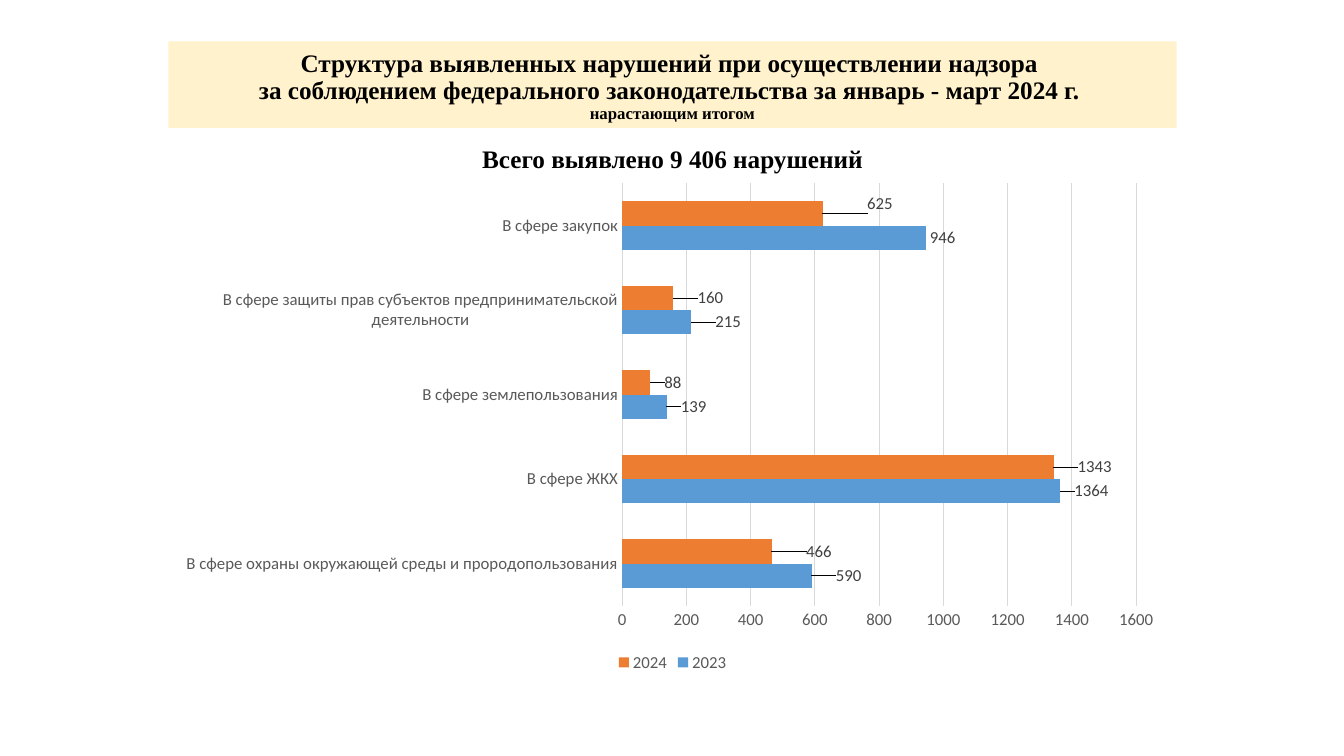
from lxml import etree
from pptx import Presentation
from pptx.chart.data import CategoryChartData
from pptx.dml.color import RGBColor
from pptx.enum.chart import (XL_CHART_TYPE, XL_LABEL_POSITION,
                             XL_LEGEND_POSITION, XL_TICK_MARK)
from pptx.enum.text import MSO_ANCHOR, MSO_AUTO_SIZE, PP_ALIGN
from pptx.oxml.ns import qn
from pptx.util import Inches, Pt

# Content
TITLE = [
    ("Структура выявленных нарушений при осуществлении надзора ", 18),
    ("за соблюдением федерального законодательства за январь - март 2024 г. ", 18),
    ("нарастающим итогом", 12),
]
TOTAL = [("Всего выявлено 9 406 нарушений", 18)]
AREAS = [
    "В сфере охраны окружающей среды и прородопользования",
    "В сфере ЖКХ",
    "В сфере землепользования",
    "В сфере защиты прав субъектов предпринимательской деятельности",
    "В сфере закупок",
]
BLACK = RGBColor(0x00, 0x00, 0x00)
CREAM = RGBColor(0xFF, 0xF2, 0xCC)
BLUE = RGBColor(0x5B, 0x9B, 0xD5)
ORANGE = RGBColor(0xED, 0x7D, 0x31)
GREY = RGBColor(0x59, 0x59, 0x59)
DARK = RGBColor(0x40, 0x40, 0x40)
PALE = RGBColor(0xD9, 0xD9, 0xD9)

# Year, values, colour, label shifts as (x, y) shares of the chart
YEARS = [
    ("2023", [590, 1364, 139, 215, 946], BLUE,
     [(0.02, 0), (0.01, 0), (0.01, 0), (0.02, 0), (0, 0)]),
    ("2024", [466, 1343, 88, 160, 625], ORANGE,
     [(0.03, 0), (0.02, 0), (0.01, 0), (0.02, 0), (0.04, -0.02)]),
]
LEFT, WIDTH = Inches(1.67), Inches(10)


def put_text(shape, lines, spacing=1.0, anchor=MSO_ANCHOR.TOP,
             color=BLACK, face="Times New Roman"):
    frame = shape.text_frame
    frame.word_wrap = True
    frame.auto_size = MSO_AUTO_SIZE.NONE
    frame.vertical_anchor = anchor
    para = frame.paragraphs[0]
    para.alignment = PP_ALIGN.CENTER
    para.line_spacing = spacing
    para.space_before = Pt(0)
    for i, (words, size) in enumerate(lines):
        if i:
            para.add_line_break()
        run = para.add_run()
        run.text = words
        style(run.font, size, color, face)
        run.font.bold = True


def style(font, size, color, face="Calibri"):
    font.name, font.size = face, Pt(size)
    font.color.rgb = color


def layout(**parts):
    root = etree.Element(qn("c:layout"))
    manual = etree.SubElement(root, qn("c:manualLayout"))
    for tag, val in parts.items():
        etree.SubElement(manual, qn("c:" + tag)).set("val", str(val))
    return root


deck = Presentation()
deck.slide_width, deck.slide_height = Inches(13.33), Inches(7.5)
slide = deck.slides.add_slide(deck.slide_layouts[5])

# Title and total
title = slide.shapes.title
title.left, title.top = LEFT, Inches(0.41)
title.width, title.height = WIDTH, Inches(0.86)
title.fill.solid()
title.fill.fore_color.rgb = CREAM
put_text(title, TITLE, spacing=0.9, anchor=MSO_ANCHOR.BOTTOM)
total = slide.shapes.add_textbox(LEFT, Inches(1.43), WIDTH, Inches(0.36))
put_text(total, TOTAL, spacing=0.8)

# Chart
data = CategoryChartData()
data.categories = AREAS
for year, vals, *_ in YEARS:
    data.add_series(year, vals)
chart = slide.shapes.add_chart(XL_CHART_TYPE.BAR_CLUSTERED, LEFT, Inches(1.72),
                               WIDTH, Inches(4.99), data).chart
chart.has_title = False
style(chart.font, 10, BLACK)
chart.has_legend = True
chart.legend.position = XL_LEGEND_POSITION.BOTTOM
chart.legend.include_in_layout = False
style(chart.legend.font, 12, GREY)

# Plot area
area = chart.plots[0]
area.gap_width, area.overlap = 150, 0
area.vary_by_categories = False
box = chart._chartSpace.chart.plotArea
for old in box.findall(qn("c:layout")):
    box.remove(old)
box.insert(0, layout(layoutTarget="inner", xMode="edge", yMode="edge",
                     x=0.45, y=0.02, w=0.51, h=0.84))

# Axes
for axis in (chart.category_axis, chart.value_axis):
    axis.major_tick_mark = axis.minor_tick_mark = XL_TICK_MARK.NONE
    axis.format.line.fill.background()
    style(axis.tick_labels.font, 12, GREY)
scale = chart.value_axis
scale.minimum_scale, scale.maximum_scale, scale.major_unit = 0, 1600, 200
scale.has_major_gridlines = True
grid = scale.major_gridlines.format.line
grid.color.rgb, grid.width = PALE, Pt(0.75)

# Bars and their labels
for bars, (_, _, color, shifts) in zip(area.series, YEARS):
    bars.format.fill.solid()
    bars.format.fill.fore_color.rgb = color
    bars.invert_if_negative = False
    tags = bars.data_labels
    tags.show_value = True
    tags.position = XL_LABEL_POSITION.OUTSIDE_END
    style(tags.font, 12, DARK)
    for i, (x, y) in enumerate(shifts):
        label = bars.points[i].data_label
        label.position = XL_LABEL_POSITION.OUTSIDE_END
        style(label.font, 12, DARK)
    for node, (x, y) in zip(bars._element.iter(qn("c:dLbl")), shifts):
        node.insert(1, layout(x=x, y=y))

deck.save("out.pptx")
